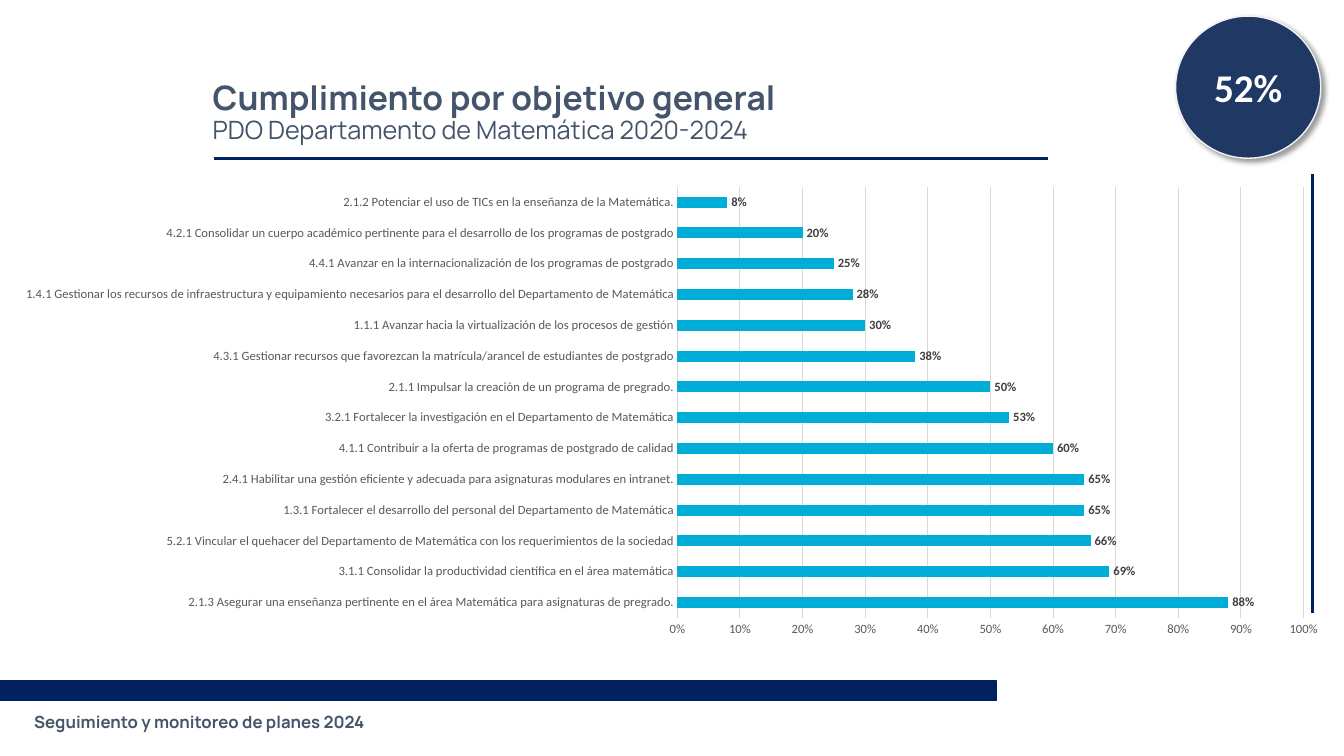
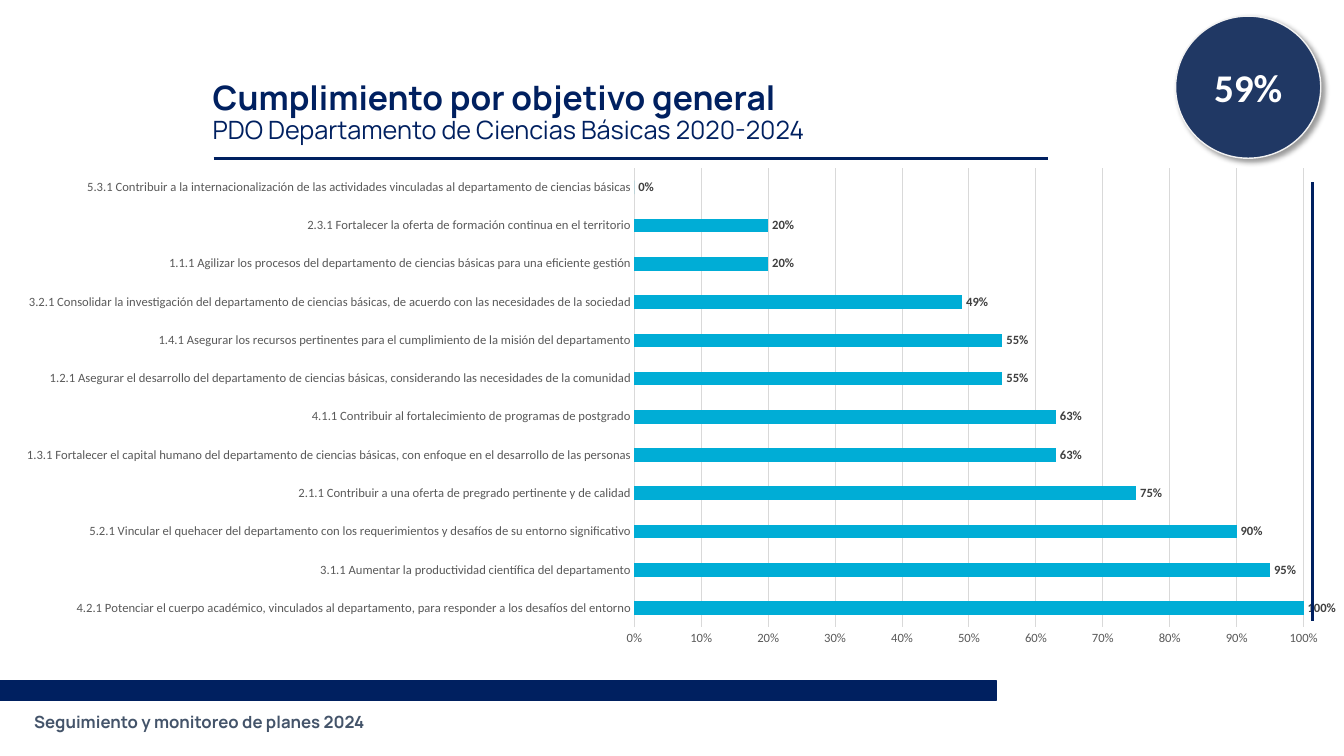
from dataclasses import dataclass

from lxml import etree
from pptx import Presentation
from pptx.chart.data import CategoryChartData
from pptx.dml.color import RGBColor
from pptx.enum.chart import XL_CHART_TYPE, XL_LABEL_POSITION, XL_TICK_MARK
from pptx.enum.shapes import MSO_CONNECTOR, MSO_SHAPE
from pptx.enum.text import MSO_ANCHOR, MSO_AUTO_SIZE, PP_ALIGN
from pptx.oxml import parse_xml
from pptx.oxml.ns import nsdecls, qn
from pptx.util import Inches, Pt

BAR_CHART = XL_CHART_TYPE.BAR_CLUSTERED
OUTSIDE_END = XL_LABEL_POSITION.OUTSIDE_END
NO_TICK = XL_TICK_MARK.NONE
RECTANGLE, OVAL = MSO_SHAPE.RECTANGLE, MSO_SHAPE.OVAL
STRAIGHT = MSO_CONNECTOR.STRAIGHT
MIDDLE = MSO_ANCHOR.MIDDLE
NO_FIT = MSO_AUTO_SIZE.NONE
LEFT, CENTER = PP_ALIGN.LEFT, PP_ALIGN.CENTER

COLORS = {
    "navy": "002060",
    "slate": "44546A",
    "badge": "203864",
    "badge_edge": "F2F2F2",
    "bar": "00ADD6",
    "grid": "D9D9D9",
    "axis_text": "595959",
    "value_text": "404040",
    "white": "FFFFFF",
    "black": "000000",
}
HEADING = "Cumplimiento por objetivo general"
FOOTER = "Seguimiento y monitoreo de planes 2024"

# Text styles
TITLE_FONT = {"name": "Manrope", "size": Pt(24), "bold": True}
SUBTITLE_FONT = {"name": "Manrope", "size": Pt(18), "bold": False}
FOOTER_FONT = {"name": "Manrope", "size": Pt(12), "bold": True}
BADGE_FONT = {"name": "Calibri", "size": Pt(28), "bold": True}
CHART_FONT = {"name": "Calibri", "size": Pt(10)}
AXIS_FONT = {"name": "Calibri", "size": Pt(9), "bold": False}
VALUE_FONT = {"name": "Calibri", "size": Pt(9), "bold": True}


@dataclass(frozen=True)
class Plan:
    subtitle: str
    title_color: str
    total: str
    chart_top: float
    chart_height: float
    plot_left: float  # share of the chart width
    side_rule_top: float
    objectives: tuple[tuple[str, float], ...]  # from the bottom bar up


PLANS = (
    Plan(
        "PDO Departamento de Matemática 2020-2024", "slate", "52%",
        1.76, 4.65, 0.504, 1.73,
        (
            ("2.1.3 Asegurar una enseñanza pertinente en el área Matemática para asignaturas de pregrado.", 0.88),
            ("3.1.1 Consolidar la productividad científica en el área matemática", 0.69),
            ("5.2.1 Vincular el quehacer del Departamento de Matemática con los requerimientos de la sociedad", 0.66),
            ("1.3.1 Fortalecer el desarrollo del personal del Departamento de Matemática", 0.65),
            ("2.4.1 Habilitar una gestión eficiente y adecuada para asignaturas modulares en intranet.", 0.65),
            ("4.1.1 Contribuir a la oferta de programas de postgrado de calidad", 0.6),
            ("3.2.1 Fortalecer la investigación en el Departamento de Matemática", 0.53),
            ("2.1.1 Impulsar la creación de un programa de pregrado.", 0.5),
            ("4.3.1 Gestionar recursos que favorezcan la matrícula/arancel de estudiantes de postgrado", 0.38),
            ("1.1.1 Avanzar hacia la virtualización de los procesos de gestión", 0.3),
            ("1.4.1 Gestionar los recursos de infraestructura y equipamiento necesarios "
             "para el desarrollo del Departamento de Matemática", 0.28),
            ("4.4.1 Avanzar en la internacionalización de los programas de postgrado", 0.25),
            ("4.2.1 Consolidar un cuerpo académico pertinente para el desarrollo de los programas de postgrado", 0.2),
            ("2.1.2 Potenciar el uso de TICs en la enseñanza de la Matemática.", 0.08),
        ),
    ),
    Plan(
        "PDO Departamento de Ciencias Básicas 2020-2024", "navy", "59%",
        1.57, 4.95, 0.472, 1.81,
        (
            ("4.2.1 Potenciar el cuerpo académico, vinculados al departamento, "
             "para responder a los desafíos del entorno", 1),
            ("3.1.1 Aumentar la productividad científica del departamento", 0.95),
            ("5.2.1 Vincular el quehacer del departamento con los requerimientos "
             "y desafíos de su entorno significativo", 0.9),
            ("2.1.1 Contribuir a una oferta de pregrado pertinente y de calidad", 0.75),
            ("1.3.1 Fortalecer el capital humano del departamento de ciencias básicas, "
             "con enfoque en el desarrollo de las personas", 0.63),
            ("4.1.1 Contribuir al fortalecimiento de programas de postgrado", 0.63),
            ("1.2.1 Asegurar el desarrollo del departamento de ciencias básicas, "
             "considerando las necesidades de la comunidad", 0.55),
            ("1.4.1 Asegurar los recursos pertinentes para el cumplimiento de la misión del departamento", 0.55),
            ("3.2.1 Consolidar la investigación del departamento de ciencias básicas, "
             "de acuerdo con las necesidades de la sociedad", 0.49),
            ("1.1.1 Agilizar los procesos del departamento de ciencias básicas para una eficiente gestión", 0.2),
            ("2.3.1 Fortalecer la oferta de formación continua en el territorio", 0.2),
            ("5.3.1 Contribuir a la internacionalización de las actividades "
             "vinculadas al departamento de ciencias básicas", 0),
        ),
    ),
)


def rgb(color: str) -> RGBColor:
    return RGBColor.from_string(COLORS[color])


def assign(target, values: dict) -> None:
    for attribute, value in values.items():
        setattr(target, attribute, value)


def style_font(font, values: dict, color: str) -> None:
    assign(font, values)
    font.color.rgb = rgb(color)


def style_line(line, color: str, width: float) -> None:
    line.color.rgb = rgb(color)
    line.width = Pt(width)


def place(shape, left: float, top: float, width: float, height: float) -> None:
    assign(shape, {"left": Inches(left), "top": Inches(top),
                   "width": Inches(width), "height": Inches(height)})


def add_panel(slide, kind, box: tuple, fill: str, edge: str | None = None):
    panel = slide.shapes.add_shape(kind, *map(Inches, box))
    panel.shadow.inherit = False
    panel.fill.solid()
    panel.fill.fore_color.rgb = rgb(fill)
    if edge:
        style_line(panel.line, edge, 1)
    else:
        panel.line.fill.background()
    return panel


def write_label(panel, text: str, values: dict, color: str, alignment) -> None:
    panel.text_frame.vertical_anchor = MIDDLE
    label = panel.text_frame.paragraphs[0]
    label.text, label.alignment = text, alignment
    style_font(label.font, values, color)


def add_rule(slide, start: tuple, end: tuple) -> None:
    rule = slide.shapes.add_connector(STRAIGHT, *map(Inches, start + end))
    style_line(rule.line, "navy", 2.25)
    etree.SubElement(rule.element.spPr, qn("a:effectLst"))


def add_title(slide, plan: Plan) -> None:
    title = slide.shapes.title
    place(title, 2.01, 0.4, 10.41, 1.45)
    frame = title.text_frame
    frame.text = f"{HEADING}\n{plan.subtitle}"
    assign(frame, {"vertical_anchor": MIDDLE, "word_wrap": True, "auto_size": NO_FIT})
    for paragraph, values in zip(frame.paragraphs, (TITLE_FONT, SUBTITLE_FONT)):
        assign(paragraph, {"alignment": LEFT, "line_spacing": 0.9,
                           "space_before": Pt(0)})
        style_font(paragraph.font, values, plan.title_color)


def fix_plot_area(chart, left: float) -> None:
    shares = {"x": left, "y": 0.02, "w": round(0.97 - left, 3), "h": 0.92}
    entries = "".join(f'<c:{key}Mode val="edge"/>' for key in "xy")
    entries += "".join(f'<c:{key} val="{share}"/>' for key, share in shares.items())
    plot_area = chart.element.chart.plotArea
    for layout in plot_area.findall(qn("c:layout")):
        plot_area.remove(layout)
    plot_area.insert(0, parse_xml(
        f'<c:layout {nsdecls("c")}><c:manualLayout><c:layoutTarget val="inner"/>'
        f'{entries}</c:manualLayout></c:layout>'))


def add_objectives_chart(slide, plan: Plan) -> None:
    data = CategoryChartData(number_format="0%")
    data.categories = [name for name, _ in plan.objectives]
    data.add_series("Series 1", [share for _, share in plan.objectives])
    box = (0, plan.chart_top, 13.33, plan.chart_height)
    chart = slide.shapes.add_chart(BAR_CHART, *map(Inches, box), data).chart
    assign(chart, {"has_legend": False, "has_title": False})
    style_font(chart.font, CHART_FONT, "black")
    fix_plot_area(chart, plan.plot_left)

    # Axes
    for axis in (chart.category_axis, chart.value_axis):
        assign(axis, {"major_tick_mark": NO_TICK, "minor_tick_mark": NO_TICK})
        style_font(axis.tick_labels.font, AXIS_FONT, "axis_text")
    style_line(chart.category_axis.format.line, "grid", 0.75)
    shares = chart.value_axis
    assign(shares, {"minimum_scale": 0, "maximum_scale": 1, "major_unit": 0.1,
                    "has_major_gridlines": True})
    assign(shares.tick_labels, {"number_format": "0%", "number_format_is_linked": False})
    shares.format.line.fill.background()
    style_line(shares.major_gridlines.format.line, "grid", 0.75)

    # Bars and their values
    plot = chart.plots[0]
    assign(plot, {"gap_width": 182, "vary_by_categories": False, "has_data_labels": True})
    fill = plot.series[0].format.fill
    fill.solid()
    fill.fore_color.rgb = rgb("bar")
    assign(plot.data_labels, {"show_value": True, "number_format": "0%",
                              "number_format_is_linked": False, "position": OUTSIDE_END})
    style_font(plot.data_labels.font, VALUE_FONT, "value_text")


def add_badge(slide, total: str) -> None:
    badge = add_panel(slide, OVAL, (11.66, 0.16, 1.44, 1.41), "badge", "badge_edge")
    write_label(badge, total, BADGE_FONT, "white", CENTER)
    effects = badge.element.spPr.find(qn("a:effectLst"))
    effects.append(parse_xml(
        f'<a:outerShdw {nsdecls("a")} blurRad="{Pt(4)}" dist="{Pt(3)}" dir="2700000" '
        f'algn="tl" rotWithShape="0"><a:srgbClr val="{COLORS["black"]}">'
        '<a:alpha val="40000"/></a:srgbClr></a:outerShdw>'))


def add_footer(slide) -> None:
    add_panel(slide, RECTANGLE, (0, 6.75, 9.88, 0.2), "navy", "navy")
    caption = add_panel(slide, RECTANGLE, (0.24, 6.97, 4.07, 0.38), "white")
    write_label(caption, FOOTER, FOOTER_FONT, "slate", LEFT)


def main() -> None:
    deck = Presentation()
    assign(deck, {"slide_width": Inches(13.33), "slide_height": Inches(7.5)})
    title_only = deck.slide_layouts.get_by_name("Title Only")
    for plan in PLANS:
        slide = deck.slides.add_slide(title_only)
        add_footer(slide)
        add_title(slide, plan)
        add_objectives_chart(slide, plan)
        add_rule(slide, (13.02, plan.side_rule_top), (13.02, plan.side_rule_top + 4.35))
        add_rule(slide, (2.12, 1.57), (10.39, 1.57))
        add_badge(slide, plan.total)
    deck.save("out.pptx")


if __name__ == "__main__":
    main()
